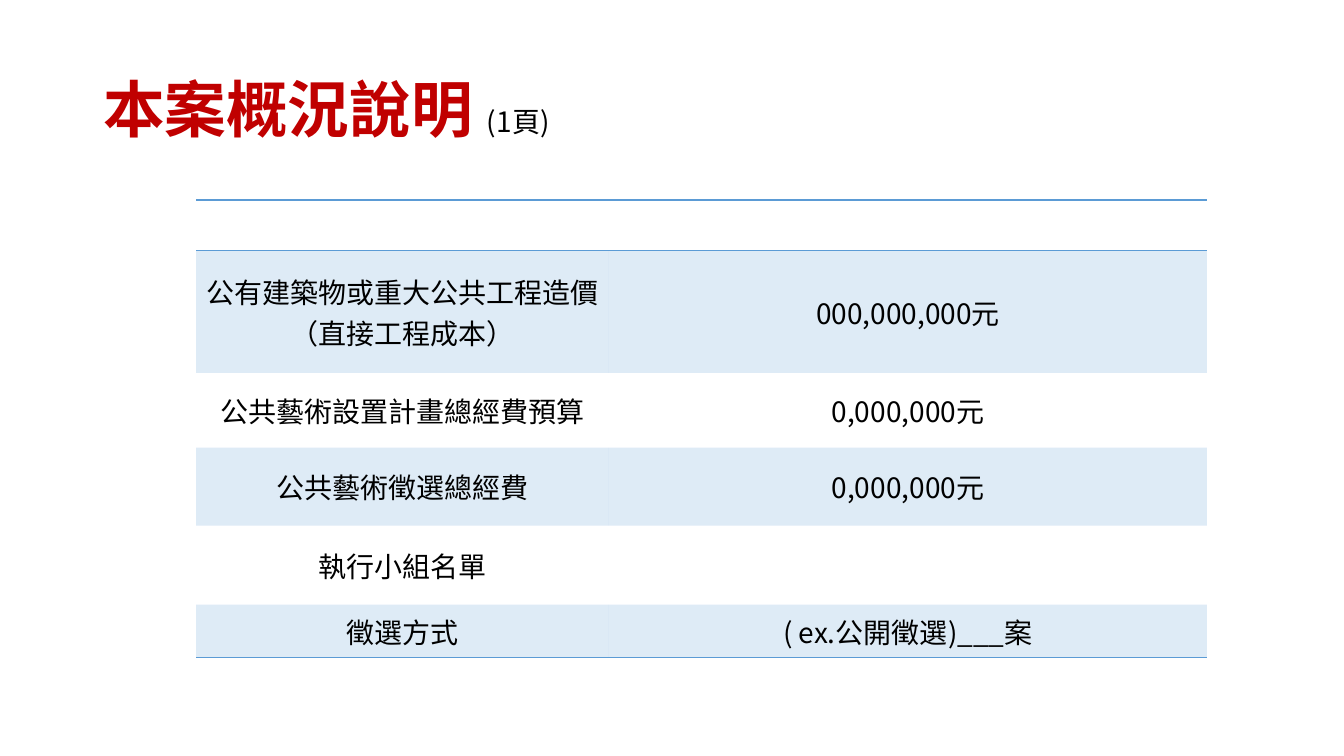
"""Build the project overview slide: a title and a banded two-column table."""
from dataclasses import dataclass

from lxml.etree import SubElement
from pptx import Presentation
from pptx.dml.color import RGBColor
from pptx.enum.text import MSO_ANCHOR as Anchor, PP_ALIGN as Align
from pptx.oxml.ns import qn
from pptx.util import Pt

TITLE = "本案概況說明 "
PAGE_NOTE = "(1頁)"
ROWS = [
    ("", ""),
    ("公有建築物或重大公共工程造價（直接工程成本）", "000,000,000元"),
    ("公共藝術設置計畫總經費預算", "0,000,000元"),
    ("公共藝術徵選總經費", "0,000,000元"),
    ("執行小組名單", ""),
    ("徵選方式", "( ex.公開徵選)___案"),
]
ROW_HEIGHTS = [49, 122, 75, 78, 79, 53]
COLUMN_WIDTHS = [413, 598]
RULES = {0: ("lnT", "lnB"), len(ROWS) - 1: ("lnB",)}
PAGE_SIZE = (1344, 756)
TITLE_BOX = (93, 40, 1159, 146)
TABLE_ORIGIN = (196, 200)
NO_STYLE = "{2D5ABB26-0587-4C30-8999-92F81FD0307C}"


@dataclass(frozen=True)
class Theme:
    font: str = "Noto Sans CJK SC"
    red: str = "C00000"
    black: str = "000000"
    blue: str = "5B9BD5"
    band_alpha: int = 20
    title_size: int = 44
    body_size: int = 20
    rule_width: int = 1


THEME = Theme()


def px(length):
    return round(length * 914400 / 100.8)


def style_font(font, size, color, bold=False):
    font.size, font.bold, font.name = Pt(size), bold, THEME.font
    font.color.rgb = RGBColor.from_string(color)
    SubElement(font._element, qn("a:ea"), typeface=THEME.font)


def add_title(page):
    box = page.shapes.title
    box.left, box.top, box.width, box.height = map(px, TITLE_BOX)
    box.text_frame.vertical_anchor = Anchor.MIDDLE
    para = box.text_frame.paragraphs[0]
    para.alignment, para.line_spacing = Align.LEFT, 0.9
    for text, size, color, bold in (
        (TITLE, THEME.title_size, THEME.red, True),
        (PAGE_NOTE, THEME.body_size, THEME.black, False),
    ):
        span = para.add_run()
        span.text = text
        style_font(span.font, size, color, bold)


def add_rule(cell, side):
    line = SubElement(cell._tc.get_or_add_tcPr(), qn(f"a:{side}"), w=str(Pt(THEME.rule_width)))
    SubElement(SubElement(line, qn("a:solidFill")), qn("a:srgbClr"), val=THEME.blue)


def fill_band(cell):
    cell.fill.solid()
    cell.fill.fore_color.rgb = RGBColor.from_string(THEME.blue)
    color = cell._tc.tcPr.find(f"{qn('a:solidFill')}/{qn('a:srgbClr')}")
    SubElement(color, qn("a:alpha"), val=str(THEME.band_alpha * 1000))


def add_overview(page):
    size = (sum(COLUMN_WIDTHS), sum(ROW_HEIGHTS))
    table = page.shapes.add_table(
        len(ROWS), len(COLUMN_WIDTHS), *map(px, TABLE_ORIGIN + size)
    ).table
    table.first_row = table.horz_banding = False
    table._tbl.tblPr.find(qn("a:tableStyleId")).text = NO_STYLE
    for column, width in zip(table.columns, COLUMN_WIDTHS):
        column.width = px(width)
    for index, (row, texts) in enumerate(zip(table.rows, ROWS)):
        row.height = px(ROW_HEIGHTS[index])
        for cell, text in zip(row.cells, texts):
            cell.text = text
            cell.vertical_anchor = Anchor.MIDDLE
            para = cell.text_frame.paragraphs[0]
            para.alignment = Align.CENTER
            style_font(para.font, THEME.body_size, THEME.black)
            for side in RULES.get(index, ()):
                add_rule(cell, side)
            if index % 2:
                fill_band(cell)
            else:
                cell.fill.background()


def main():
    deck = Presentation()
    deck.slide_width, deck.slide_height = map(px, PAGE_SIZE)
    page = deck.slides.add_slide(deck.slide_layouts.get_by_name("Title Only"))
    add_title(page)
    add_overview(page)
    deck.save("out.pptx")


if __name__ == "__main__":
    main()
